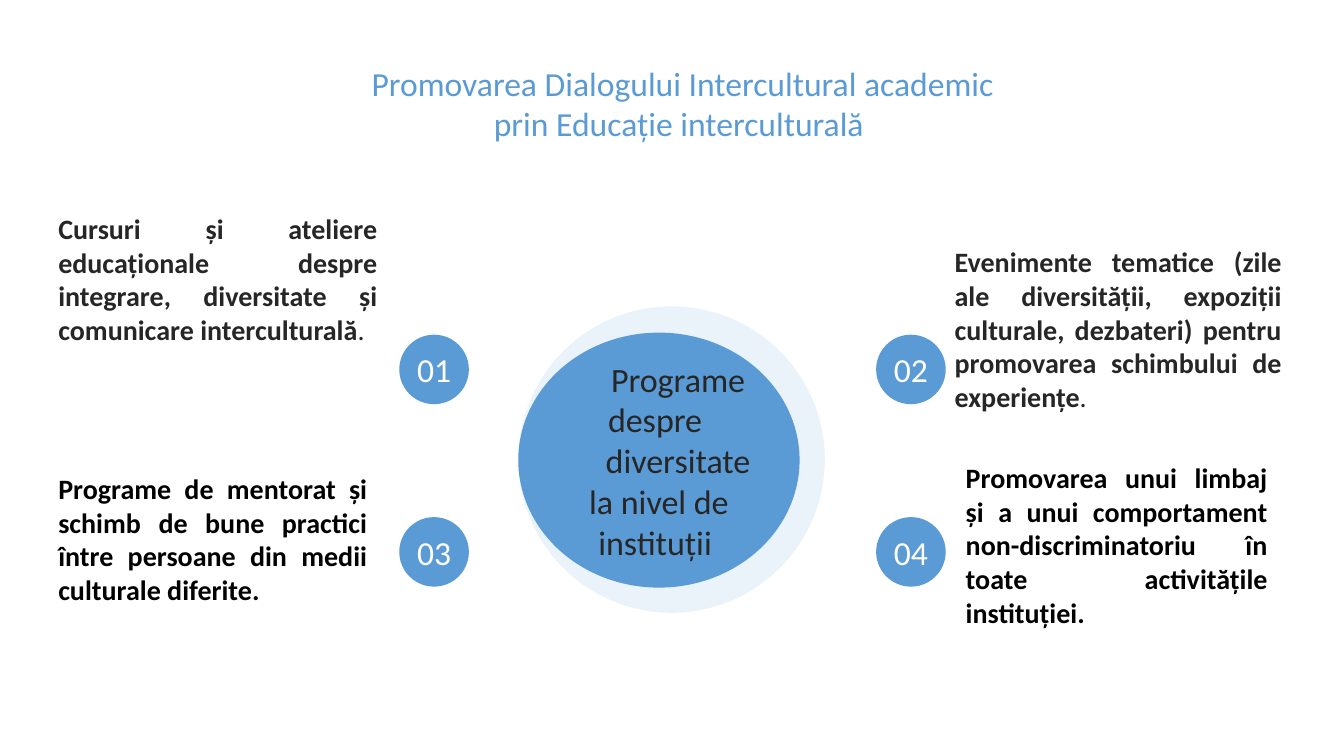
from dataclasses import dataclass

from lxml import etree
from pptx import Presentation
from pptx.dml.color import RGBColor
from pptx.enum.shapes import MSO_SHAPE
from pptx.enum.text import MSO_ANCHOR, MSO_AUTO_SIZE, PP_ALIGN
from pptx.oxml.ns import qn
from pptx.util import Inches, Pt

OVAL = MSO_SHAPE.OVAL
TOP, MIDDLE = MSO_ANCHOR.TOP, MSO_ANCHOR.MIDDLE
CENTER, JUSTIFY = PP_ALIGN.CENTER, PP_ALIGN.JUSTIFY
NO_AUTOFIT = MSO_AUTO_SIZE.NONE

WIDTH, HEIGHT = Inches(13.33), Inches(7.5)
FONT = "Calibri"
BLUE, PALE, WHITE, DARK, BLACK = "5B9BD5", "9DC3E6", "FFFFFF", "262626", "000000"


@dataclass(frozen=True)
class Area:
    left: float
    top: float
    width: float
    height: float

    def lengths(self) -> tuple[int, int, int, int]:
        return (
            int(WIDTH * self.left / 100),
            int(HEIGHT * self.top / 100),
            int(WIDTH * self.width / 100),
            int(HEIGHT * self.height / 100),
        )


@dataclass(frozen=True)
class Measure:
    description: str
    area: Area
    color: str
    ending: str = ""


TITLE = "Promovarea Dialogului Intercultural academic prin Educație interculturală "
TITLE_AREA = Area(26.56, 7.6, 48.46, 11.33)
THEME = ["Programe despre ", "diversitate la nivel de instituții "]
THEME_AREA = Area(38.56, 44, 20.93, 33.73)
HALO_AREA = Area(38.56, 40.53, 22.81, 40.53)

BADGE_COLUMNS = (29.71, 65.19)
BADGE_ROWS = (44.27, 68.4)
BADGE_WIDTH, BADGE_HEIGHT = 5.18, 9.2

MEASURES = [
    Measure(
        "Cursuri și ateliere educaționale despre integrare, diversitate și "
        "comunicare interculturală",
        Area(3.6, 27.33, 25.21, 18.13), DARK, ".",
    ),
    Measure(
        "Evenimente tematice (zile ale diversității, expoziții culturale, "
        "dezbateri) pentru promovarea schimbului de experiențe",
        Area(70.29, 31.73, 25.81, 23.87), DARK, ".",
    ),
    Measure(
        "Programe de mentorat și schimb de bune practici între persoane din "
        "medii culturale diferite.",
        Area(3.6, 61.73, 24.46, 23.07), BLACK,
    ),
    Measure(
        "Promovarea unui limbaj și a unui comportament non-discriminatoriu "
        "în toate activitățile instituției.",
        Area(71.12, 60.27, 23.93, 27.07), BLACK,
    ),
]


def rgb(value: str) -> RGBColor:
    return RGBColor.from_string(value)


def write(paragraph, text: str, *, size: float, color: str, bold: bool = False,
          align=CENTER, indent: float = 0) -> None:
    paragraph.alignment = align
    if indent:
        properties = paragraph._p.get_or_add_pPr()
        properties.set("marL", "0")
        properties.set("indent", str(int(WIDTH * indent / 100)))
    run = paragraph.add_run()
    run.text = text
    run.font.name = FONT
    run.font.size = Pt(size)
    run.font.bold = bold
    run.font.color.rgb = rgb(color)


def add_disc(slide, area: Area, color: str, opacity: int = 100):
    disc = slide.shapes.add_shape(OVAL, *area.lengths())
    disc.shadow.inherit = False
    disc.fill.solid()
    disc.fill.fore_color.rgb = rgb(color)
    disc.line.fill.background()
    if opacity < 100:
        shade = disc.fill._xPr.find(qn("a:solidFill"))[0]
        etree.SubElement(shade, qn("a:alpha")).set("val", str(opacity * 1000))
    frame = disc.text_frame
    frame.margin_left = frame.margin_right = 0
    frame.margin_top = frame.margin_bottom = 0
    frame.vertical_anchor = MIDDLE
    return frame


def add_title(slide) -> None:
    heading = slide.shapes.title
    heading.left, heading.top, heading.width, heading.height = TITLE_AREA.lengths()
    frame = heading.text_frame
    frame.auto_size = NO_AUTOFIT
    frame.word_wrap = True
    frame.vertical_anchor = TOP
    write(frame.paragraphs[0], TITLE, size=24, color=BLUE)


def add_theme(slide) -> None:
    add_disc(slide, HALO_AREA, PALE, opacity=20)
    frame = add_disc(slide, THEME_AREA, BLUE)
    frame.word_wrap = True
    for position, line in enumerate(THEME):
        paragraph = frame.add_paragraph() if position else frame.paragraphs[0]
        write(paragraph, line, size=24.3, color=DARK, indent=2.85)


def add_measure(slide, position: int, measure: Measure) -> None:
    row, column = divmod(position, len(BADGE_COLUMNS))
    badge_area = Area(BADGE_COLUMNS[column], BADGE_ROWS[row], BADGE_WIDTH, BADGE_HEIGHT)
    badge = add_disc(slide, badge_area, BLUE)
    badge.word_wrap = False
    write(badge.paragraphs[0], f"{position + 1:02}", size=24, color=WHITE)

    frame = slide.shapes.add_textbox(*measure.area.lengths()).text_frame
    frame.word_wrap = True
    paragraph = frame.paragraphs[0]
    write(paragraph, measure.description, size=20, color=measure.color,
          bold=True, align=JUSTIFY)
    if measure.ending:
        write(paragraph, measure.ending, size=20, color=measure.color, align=JUSTIFY)


def main() -> None:
    deck = Presentation()
    deck.slide_width, deck.slide_height = WIDTH, HEIGHT
    slide = deck.slides.add_slide(deck.slide_layouts[5])
    add_title(slide)
    add_theme(slide)
    for position, measure in enumerate(MEASURES):
        add_measure(slide, position, measure)
    deck.save("out.pptx")


if __name__ == "__main__":
    main()
